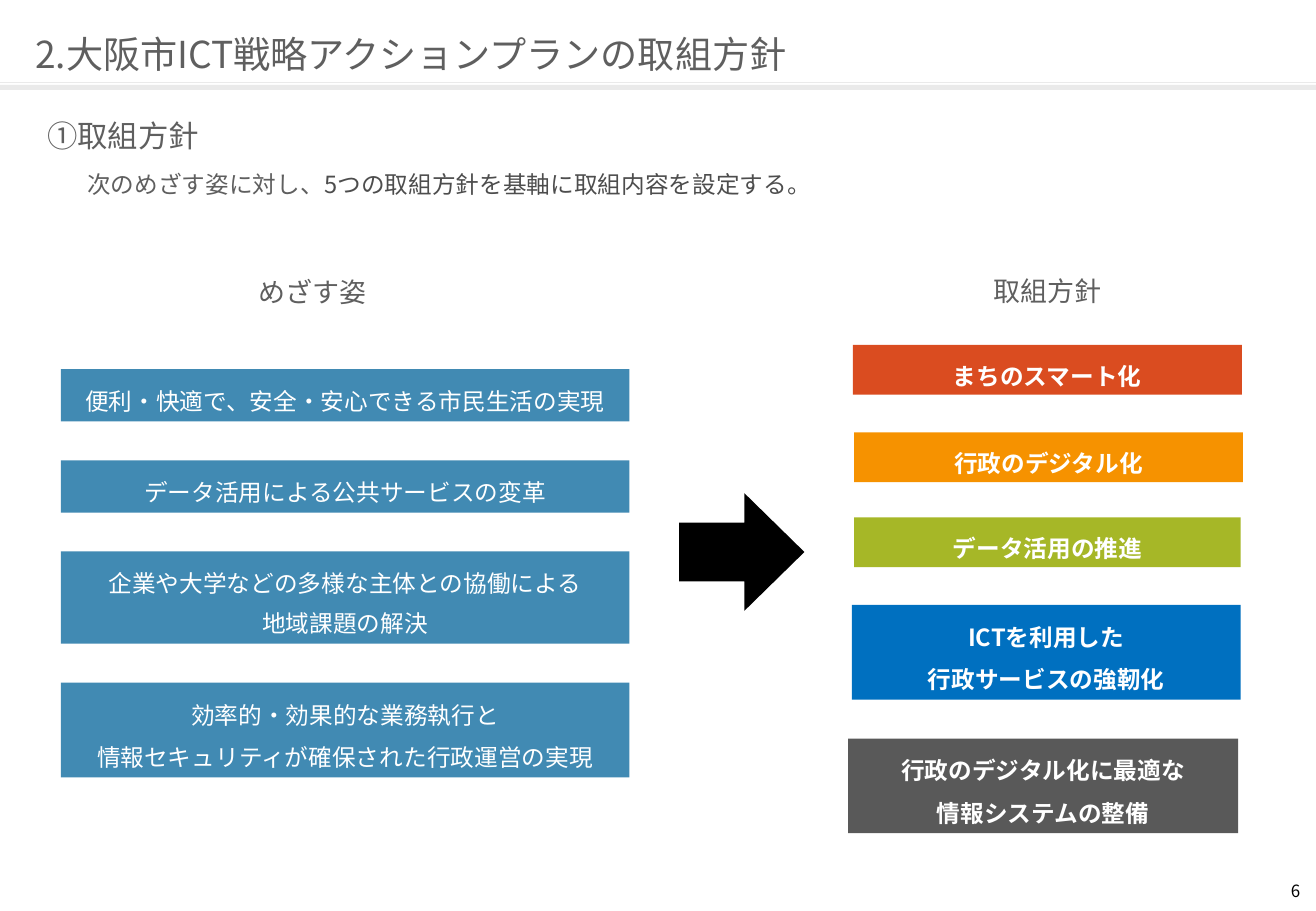
from lxml import etree
from pptx import Presentation
from pptx.dml.color import RGBColor
from pptx.enum.shapes import MSO_CONNECTOR, MSO_SHAPE
from pptx.enum.text import MSO_ANCHOR, MSO_AUTO_SIZE, PP_ALIGN
from pptx.oxml.ns import qn
from pptx.util import Inches, Pt

RECT = MSO_SHAPE.RECTANGLE
ARROW = MSO_SHAPE.RIGHT_ARROW
LINE = MSO_CONNECTOR.STRAIGHT
MIDDLE = MSO_ANCHOR.MIDDLE
TOP = MSO_ANCHOR.TOP
FIXED = MSO_AUTO_SIZE.NONE
LEFT, CENTER, RIGHT = PP_ALIGN.LEFT, PP_ALIGN.CENTER, PP_ALIGN.RIGHT

FONT = "Noto Sans CJK JP"
WIDTH = 10.83
COLORS = {
    "rule": "EAEAEA", "text": "5F5F5F", "dark": "4D4D4D",
    "black": "000000", "white": "FFFFFF", "goal": "418AB3",
    "red": "DA4C20", "orange": "F69200", "green": "A6B727",
    "blue": "0070C0", "gray": "595959",
}
GOALS = [
    (0.43, [["便利・快適で、安全・安心できる市民生活の実現"]]),
    (0.43, [["データ活用による公共サービスの変革"]]),
    (0.76, [["企業や大学などの多様な主体との協働による", "地域課題の解決"]]),
    (0.78, [["効率的・効果的な業務執行と"],
            ["情報セキュリティが確保された行政運営の実現"]]),
]
POLICIES = [
    ((7.02, 2.84, 3.2, 0.41), "red", [["まちのスマート化"]]),
    ((7.03, 3.56, 3.2, 0.41), "orange", [["行政のデジタル化"]]),
    ((7.03, 4.26, 3.18, 0.41), "green", [["データ活用の推進"]]),
    ((7.01, 4.98, 3.2, 0.78), "blue",
     [["ICTを利用した"], ["行政サービスの強靭化"]]),
    ((6.98, 6.08, 3.21, 0.78), "gray",
     [["行政のデジタル化に最適な"], ["情報システムの整備"]]),
]


def rgb(name):
    return RGBColor.from_string(COLORS[name])


def add_run(para, text, size, color, bold=False):
    run = para.add_run()
    run.text = text
    font = run.font
    font.name = FONT
    font.size = Pt(size)
    font.bold = bold
    font.color.rgb = rgb(color)
    latin = font._element.find(qn("a:latin"))
    east = etree.Element(qn("a:ea"), typeface=FONT)
    latin.addnext(east)


def set_frame(frame, anchor=MIDDLE, inset=True):
    frame.word_wrap = True
    frame.auto_size = FIXED
    frame.vertical_anchor = anchor
    side, edge = (0.1, 0.05) if inset else (0, 0)
    frame.margin_left = frame.margin_right = Inches(side)
    frame.margin_top = frame.margin_bottom = Inches(edge)


def add_title(slide, text):
    title = slide.shapes.title
    title.left, title.top = Inches(0.29), Inches(0.24)
    title.width, title.height = Inches(9.95), Inches(0.41)
    set_frame(title.text_frame, inset=False)
    para = title.text_frame.paragraphs[0]
    para.alignment = LEFT
    add_run(para, text, 22, "text")


def add_text(slide, place, runs, size, align=LEFT, anchor=MIDDLE,
             inset=True, pitch=0.9):
    box = slide.shapes.add_textbox(*map(Inches, place))
    set_frame(box.text_frame, anchor, inset)
    para = box.text_frame.paragraphs[0]
    para.alignment = align
    para.line_spacing = pitch
    for text, color in runs:
        add_run(para, text, size, color)


def add_block(slide, kind, place, color):
    block = slide.shapes.add_shape(kind, *map(Inches, place))
    block.shadow.inherit = False
    block.fill.solid()
    block.fill.fore_color.rgb = rgb(color)
    block.line.fill.background()
    return block


def add_card(slide, place, color, paras, bold=False):
    frame = add_block(slide, RECT, place, color).text_frame
    set_frame(frame)
    for index, lines in enumerate(paras):
        para = frame.add_paragraph() if index else frame.paragraphs[0]
        para.alignment = CENTER
        para.line_spacing = 1.4
        para.space_before = Pt(1.4)
        for row, text in enumerate(lines):
            if row:
                para.add_line_break()
            add_run(para, text, 14, "white", bold)


def add_rule(slide, top):
    rule = slide.shapes.add_connector(
        LINE, 0, Inches(top), Inches(WIDTH), Inches(top))
    rule.line.color.rgb = rgb("rule")
    rule.line.width = Pt(0.75)
    etree.SubElement(rule._element.spPr, qn("a:effectLst"))


def add_goals(slide):
    top = 3.04
    for height, paras in GOALS:
        add_card(slide, (0.5, top, 4.68, height), "goal", paras)
        top += height + 0.32


def main():
    deck = Presentation()
    deck.slide_width, deck.slide_height = Inches(WIDTH), Inches(7.5)
    slide = deck.slides.add_slide(deck.slide_layouts[5])

    add_rule(slide, 0.68)
    add_block(slide, RECT, (0, 0.7, WIDTH, 0.04), "rule")
    add_title(slide, "2.大阪市ICT戦略アクションプランの取組方針")
    add_text(slide, (0.29, 0.91, 10.18, 0.44), [("①取組方針", "text")], 18)
    add_text(slide, (0.62, 1.31, 6.08, 0.44),
             [("次のめざす姿に対し、", "text"),
              ("5つの取組方針を基軸に取組内容を設定する。", "dark")], 14)
    add_text(slide, (2.03, 2.2, 1.44, 0.44), [("めざす姿", "text")], 16)
    add_text(slide, (8.08, 2.19, 1.44, 0.44), [("取組方針", "text")], 16)

    add_goals(slide)
    arrow = add_block(slide, ARROW, (5.59, 4.06, 1.03, 0.97), "black")
    arrow.adjustments[1] = 0.51
    for place, color, paras in POLICIES:
        add_card(slide, place, color, paras, bold=True)
    add_text(slide, (8.17, 7.25, 2.53, 0.2), [("6", "black")], 10,
             RIGHT, TOP, inset=False, pitch=1.0)

    deck.save("out.pptx")


if __name__ == "__main__":
    main()
